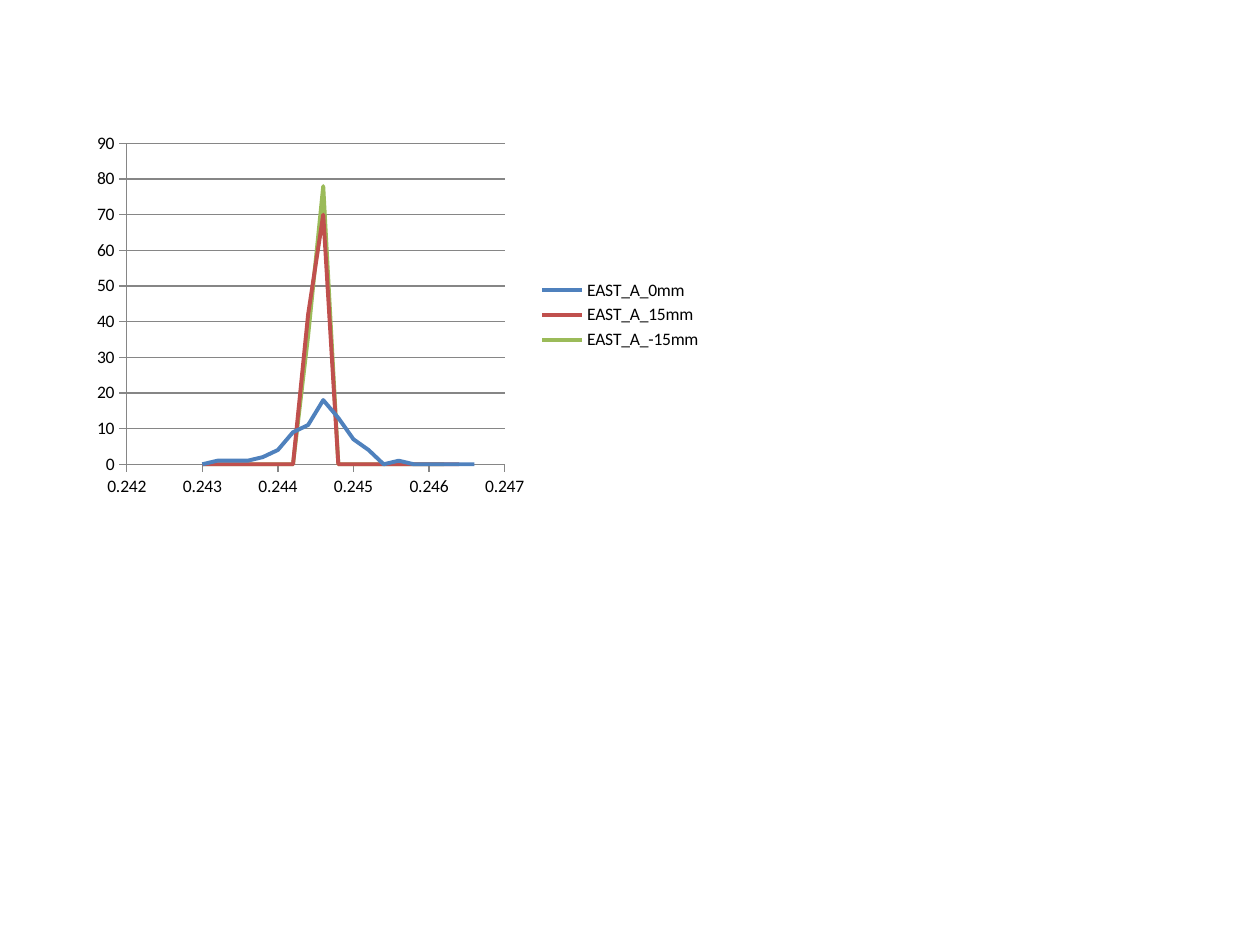
from pptx import Presentation
from pptx.chart.data import XyChartData
from pptx.dml.color import RGBColor
from pptx.enum.chart import XL_CHART_TYPE, XL_LEGEND_POSITION, XL_TICK_MARK
from pptx.util import Inches, Pt

BLACK = RGBColor(0x00, 0x00, 0x00)
GRAY = RGBColor(0x86, 0x86, 0x86)
BLUE = RGBColor(0x4F, 0x81, 0xBD)
RED = RGBColor(0xC0, 0x50, 0x4D)
GREEN = RGBColor(0x9B, 0xBB, 0x59)

scans = [
    ("EAST_A_0mm", BLUE, [0, 1, 1, 1, 2, 4, 9, 11, 18, 13, 7, 4, 0, 1, 0, 0, 0, 0, 0]),
    ("EAST_A_15mm", RED, [0] * 7 + [42, 70] + [0] * 9),
    ("EAST_A_-15mm", GREEN, [0] * 7 + [36, 78] + [0] * 8),
]

prs = Presentation()
prs.slide_width = Inches(10)
prs.slide_height = Inches(7.5)
slide = prs.slides.add_slide(prs.slide_layouts[6])

scan_data = XyChartData(number_format="General")
for name, color, counts in scans:
    scan = scan_data.add_series(name)
    for step, count in enumerate(counts):
        scan.add_data_point(round(0.243 + 0.0002 * step, 4), count)

chart = slide.shapes.add_chart(
    XL_CHART_TYPE.XY_SCATTER_SMOOTH_NO_MARKERS,
    Inches(0.67), Inches(1), Inches(5), Inches(3), scan_data,
).chart
chart.has_title = False
chart.font.name = "Calibri"
chart.font.size = Pt(10)
chart.font.color.rgb = BLACK
chart.has_legend = True
chart.legend.position = XL_LEGEND_POSITION.RIGHT
chart.legend.include_in_layout = False
chart.plots[0].vary_by_categories = False

for series, (name, color, counts) in zip(chart.plots[0].series, scans):
    series.smooth = True
    series.format.line.color.rgb = color
    series.format.line.width = Pt(2.25)

axis_formats = [
    (chart.category_axis, {"minimum_scale": 0.242, "maximum_scale": 0.247,
                           "major_unit": 0.001, "has_major_gridlines": False}),
    (chart.value_axis, {"minimum_scale": 0, "maximum_scale": 90,
                        "major_unit": 10, "has_major_gridlines": True}),
]
for axis, values in axis_formats:
    for attribute, value in values.items():
        setattr(axis, attribute, value)
    axis.major_tick_mark = XL_TICK_MARK.OUTSIDE
    axis.minor_tick_mark = XL_TICK_MARK.NONE
    axis.tick_labels.number_format = "General"
    axis.tick_labels.number_format_is_linked = False
    axis.format.line.color.rgb = GRAY
    axis.format.line.width = Pt(0.75)

grid = chart.value_axis.major_gridlines.format.line
grid.color.rgb = GRAY
grid.width = Pt(0.75)

prs.save("out.pptx")
